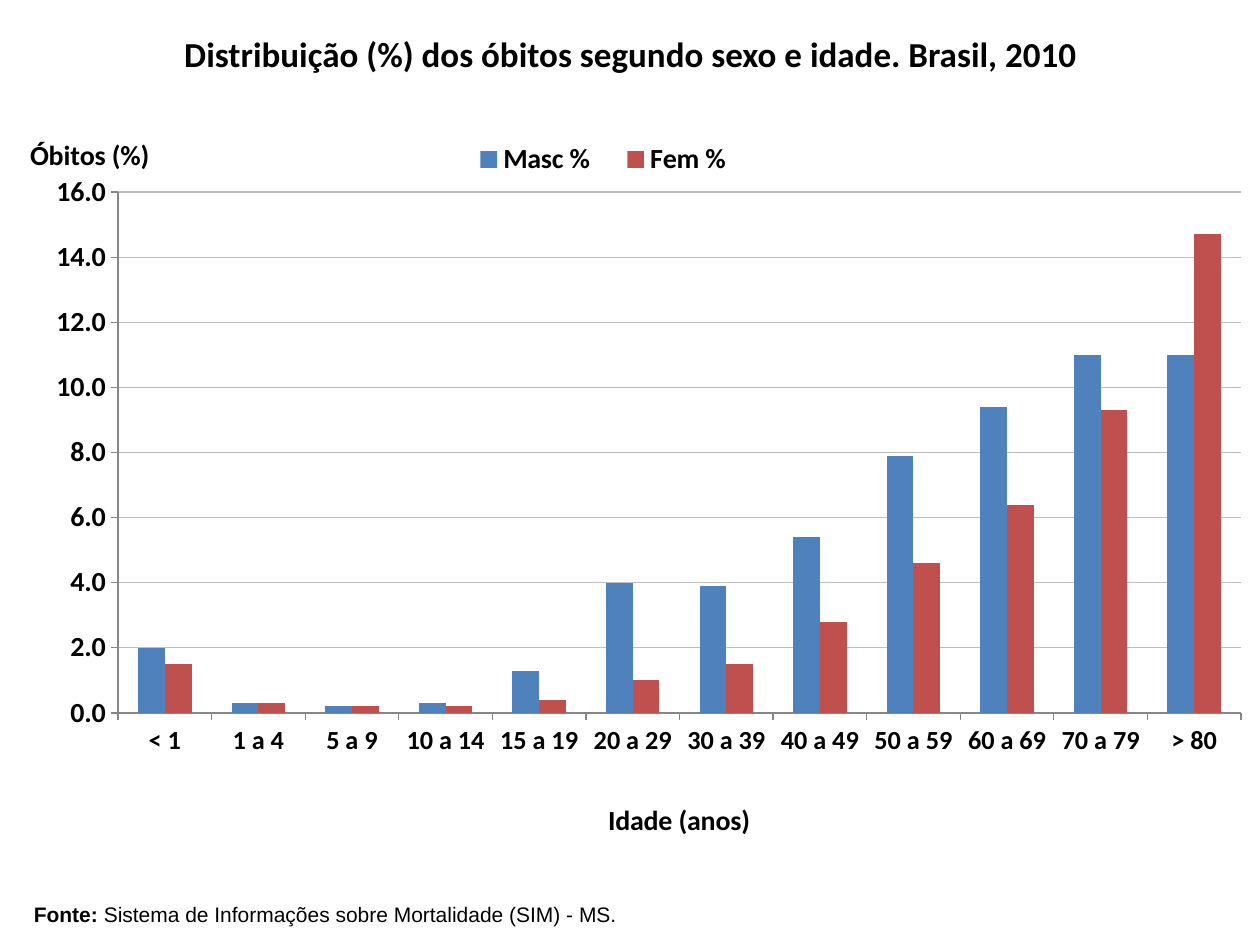
from pptx import Presentation
from pptx.chart.data import CategoryChartData as Data
from pptx.dml.color import RGBColor as RGB
from pptx.enum.chart import XL_CHART_TYPE as Kind, XL_LEGEND_POSITION as Side, XL_TICK_MARK as Tick
from pptx.enum.shapes import MSO_SHAPE as Shape
from pptx.enum.text import MSO_ANCHOR as Anchor, MSO_AUTO_SIZE as Fit, PP_ALIGN as Align
from pptx.oxml import parse_xml
from pptx.oxml.ns import nsdecls, qn
from pptx.util import Inches, Pt

theme = {
    "ink": RGB(0, 0, 0), "paper": RGB(255, 255, 255),
    "grid": RGB(0xBF, 0xBF, 0xBF), "axis": RGB(0x86, 0x86, 0x86),
    "bars": [RGB(0x4F, 0x81, 0xBD), RGB(0xC0, 0x50, 0x4D)],
    "head": 20, "label": 16, "tick": 15, "note": 12,
    "face": "Calibri", "plain": "Arial",
}


def style(font, size, bold=True, face=theme["face"]):
    font.name, font.size, font.bold = face, Pt(size), bold
    font.color.rgb = theme["ink"]


def place(node, after, inner=False, **share):
    """Give a chart part a manual layout, in shares of the chart."""
    for old in node.findall(qn("c:layout")):
        node.remove(old)
    rows = '<c:layoutTarget val="inner"/>' if inner else ""
    rows += "".join(f'<c:{k}Mode val="edge"/>' for k in "xy")
    rows += "".join(f'<c:{k} val="{v}"/>' for k, v in share.items())
    part = parse_xml(f'<c:layout {nsdecls("c")}><c:manualLayout>{rows}'
                     '</c:manualLayout></c:layout>')
    if after:
        node.find(qn(after)).addnext(part)
    else:
        node.insert(0, part)


deck = Presentation()
deck.slide_width, deck.slide_height = W, H = Inches(10), Inches(7.5)
slide = deck.slides.add_slide(deck.slide_layouts[6])
shapes = slide.shapes

# Heading
head = shapes.add_shape(Shape.RECTANGLE, int(W * 0.075), int(H * 0.028),
                        int(W * 0.851), int(H * 0.058))
head.shadow.inherit = False
head.fill.solid()
head.fill.fore_color.rgb = theme["paper"]
head.line.fill.background()

# Chart of deaths by age and sex
data = Data(number_format="0.0")
data.categories = ["< 1", "1 a 4", "5 a 9", "10 a 14", "15 a 19", "20 a 29", "30 a 39",
                   "40 a 49", "50 a 59", "60 a 69", "70 a 79", "> 80"]
data.add_series("Masc %", [2, 0.3, 0.2, 0.3, 1.3, 4, 3.9, 5.4, 7.9, 9.4, 11, 11])
data.add_series("Fem %", [1.5, 0.3, 0.2, 0.2, 0.4, 1, 1.5, 2.8, 4.6, 6.4, 9.3, 14.7])
chart = shapes.add_chart(Kind.COLUMN_CLUSTERED, 0, int(H * 0.123),
                         int(W * 0.997), int(H * 0.773), data).chart
chart.has_title = False
style(chart.font, 10, False)
root = chart.element.find(qn("c:chart"))
root.addnext(parse_xml(
    f'<c:spPr {nsdecls("c", "a")}><a:solidFill><a:srgbClr val="{theme["paper"]}"/>'
    '</a:solidFill><a:ln><a:noFill/></a:ln></c:spPr>'))
place(root.find(qn("c:plotArea")), None, True, x=0.094, y=0.105, w=0.894, h=0.72)

plot = chart.plots[0]
plot.gap_width, plot.overlap, plot.vary_by_categories = 150, 0, False
for bar, tint in zip(plot.series, theme["bars"]):
    bar.format.fill.solid()
    bar.format.fill.fore_color.rgb = tint
    bar.invert_if_negative = False

# Axes with their titles
ages, rate = chart.category_axis, chart.value_axis
for axis, text, size, x, y in [(ages, "Idade (anos)", theme["tick"], 0.48, 0.94),
                               (rate, "Óbitos (%)", theme["label"], 0.02, 0.02)]:
    style(axis.tick_labels.font, size)
    axis.major_tick_mark, axis.minor_tick_mark = Tick.OUTSIDE, Tick.NONE
    axis.format.line.color.rgb = theme["axis"]
    axis.format.line.width = Pt(0.75)
    title = axis.axis_title
    run = title.text_frame.paragraphs[0].add_run()
    run.text = text
    style(run.font, theme["label"])
    body = next(title._element.iter(qn("a:bodyPr")))
    body.set("rot", "0")
    body.set("vert", "horz")
    place(title._element, "c:tx", x=x, y=y)
ages.has_major_gridlines = False
rate.minimum_scale, rate.maximum_scale, rate.major_unit = 0, 16, 2
rate.tick_labels.number_format = "0.0"
rate.tick_labels.number_format_is_linked = False
rate.major_gridlines.format.line.color.rgb = theme["grid"]
rate.major_gridlines.format.line.width = Pt(0.75)

# Legend above the bars
chart.has_legend = True
key = chart.legend
key.position, key.include_in_layout = Side.RIGHT, False
style(key.font, theme["label"])
place(key._element, "c:legendPos", x=0.36, y=0.03, w=0.24, h=0.06)

# Source note, then the words of both text boxes
note = shapes.add_textbox(int(W * 0.017), int(H * 0.947), int(W * 0.752), int(H * 0.04))
for box, align, face, size, runs in [
    (head, Align.CENTER, theme["face"], theme["head"],
     [("Distribuição (%) dos óbitos segundo sexo e idade. Brasil, 2010", True)]),
    (note, Align.JUSTIFY, theme["plain"], theme["note"],
     [("Fonte: ", True), ("Sistema de Informações sobre Mortalidade (SIM) - MS.", False)]),
]:
    frame = box.text_frame
    frame.word_wrap, frame.auto_size = True, Fit.SHAPE_TO_FIT_TEXT
    frame.vertical_anchor = Anchor.TOP
    para = frame.paragraphs[0]
    para.alignment = align
    for text, bold in runs:
        run = para.add_run()
        run.text = text
        style(run.font, size, bold, face)

deck.save("out.pptx")
